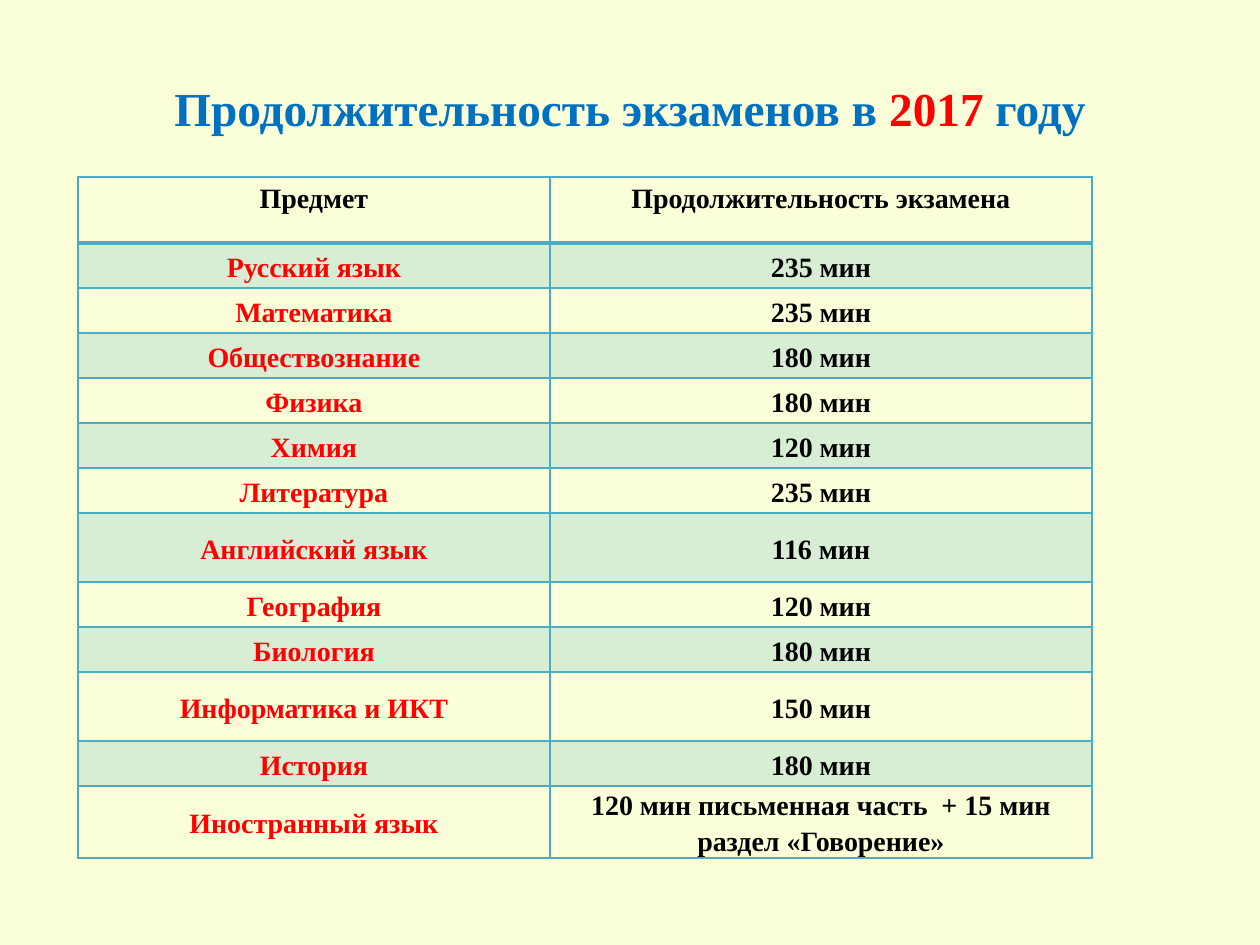
from lxml.etree import SubElement
from pptx import Presentation
from pptx.dml.color import RGBColor
from pptx.enum.text import MSO_ANCHOR as Anchor, PP_ALIGN as Align
from pptx.oxml.ns import qn
from pptx.util import Pt

PX = 914400 // 126
FONT = "Times New Roman"
CREAM, TEAL, BLUE, RED, BLACK = "FAFFD9", "4BACC6", "0070C0", "FF0000", "000000"
BAND_ALPHA = 20000

TITLE = [("Продолжительность экзаменов в ", BLUE), ("2017 ", RED), ("году", BLUE)]
TITLE_BOX = (63, 38, 1134, 140)

HEADER, NORMAL, TALL, DOUBLE = 66, 45, 69, 72
ROWS = [
    ("Предмет", "Продолжительность экзамена", HEADER),
    ("Русский язык", "235 мин", NORMAL),
    ("Математика", "235 мин", NORMAL),
    ("Обществознание", "180 мин", NORMAL),
    ("Физика", "180 мин", NORMAL),
    ("Химия", "120 мин", NORMAL),
    ("Литература", "235 мин", NORMAL),
    ("Английский язык", "116 мин", TALL),
    ("География", "120 мин", NORMAL),
    ("Биология", "180 мин", NORMAL),
    ("Информатика и ИКТ", "150 мин", TALL),
    ("История", "180 мин", NORMAL),
    ("Иностранный язык", "120 мин письменная часть  + 15 мин раздел «Говорение»", DOUBLE),
]
TABLE_LEFT, TABLE_TOP = 78, 177
COLUMNS = [472, 542]


def color(value):
    return RGBColor.from_string(value)


def style_font(font, size):
    font.name, font.size, font.bold = FONT, Pt(size), True


def add_borders(cell, bottom_width):
    properties = cell._tc.get_or_add_tcPr()
    widths = {"a:lnL": 1, "a:lnR": 1, "a:lnT": 1, "a:lnB": bottom_width}
    for position, (tag, width) in enumerate(widths.items()):
        line = SubElement(properties, qn(tag), w=str(Pt(width)))
        fill = SubElement(line, qn("a:solidFill"))
        SubElement(fill, qn("a:srgbClr"), val=TEAL)
        properties.insert(position, line)


def fill_cell(cell, banded):
    if not banded:
        cell.fill.background()
        return
    cell.fill.solid()
    cell.fill.fore_color.rgb = color(TEAL)
    tint = cell._tc.tcPr.find(".//" + qn("a:srgbClr"))
    SubElement(tint, qn("a:alpha"), val=str(BAND_ALPHA))


def write_cell(cell, text, text_color, is_header):
    cell.text = text
    para = cell.text_frame.paragraphs[0]
    para.alignment = Align.CENTER
    style_font(para.font, 16)
    para.font.color.rgb = color(text_color)
    if not is_header:
        cell.vertical_anchor = Anchor.MIDDLE
        cell.margin_left = cell.margin_right = 9 * PX
        cell.margin_top = cell.margin_bottom = 0
        para.line_spacing = 1.15
        para.space_before = para.space_after = Pt(6)


def add_title(slide):
    title = slide.shapes.title
    title.left, title.top, title.width, title.height = (n * PX for n in TITLE_BOX)
    title.text_frame.vertical_anchor = Anchor.MIDDLE
    para = title.text_frame.paragraphs[0]
    para.alignment = Align.CENTER
    style_font(para.font, 27)
    for text, text_color in TITLE:
        span = para.add_run()
        span.text = text
        span.font.color.rgb = color(text_color)


def add_exam_table(slide):
    height = sum(row[-1] for row in ROWS)
    frame = slide.shapes.add_table(
        len(ROWS), len(COLUMNS),
        TABLE_LEFT * PX, TABLE_TOP * PX, sum(COLUMNS) * PX, height * PX)
    table = frame.table
    table.first_row = table.horz_banding = False
    for column, width in zip(table.columns, COLUMNS):
        column.width = width * PX
    for index, (subject, duration, row_height) in enumerate(ROWS):
        is_header = index == 0
        table.rows[index].height = row_height * PX
        subject_color = BLACK if is_header else RED
        texts = [(subject, subject_color), (duration, BLACK)]
        for cell, (text, text_color) in zip(table.rows[index].cells, texts):
            write_cell(cell, text, text_color, is_header)
            fill_cell(cell, index % 2 == 1)
            add_borders(cell, 2 if is_header else 1)


def main():
    deck = Presentation()
    deck.slide_width, deck.slide_height = 1260 * PX, 945 * PX
    slide = deck.slides.add_slide(deck.slide_layouts[5])
    slide.background.fill.solid()
    slide.background.fill.fore_color.rgb = color(CREAM)
    add_title(slide)
    add_exam_table(slide)
    deck.save("out.pptx")


if __name__ == "__main__":
    main()
